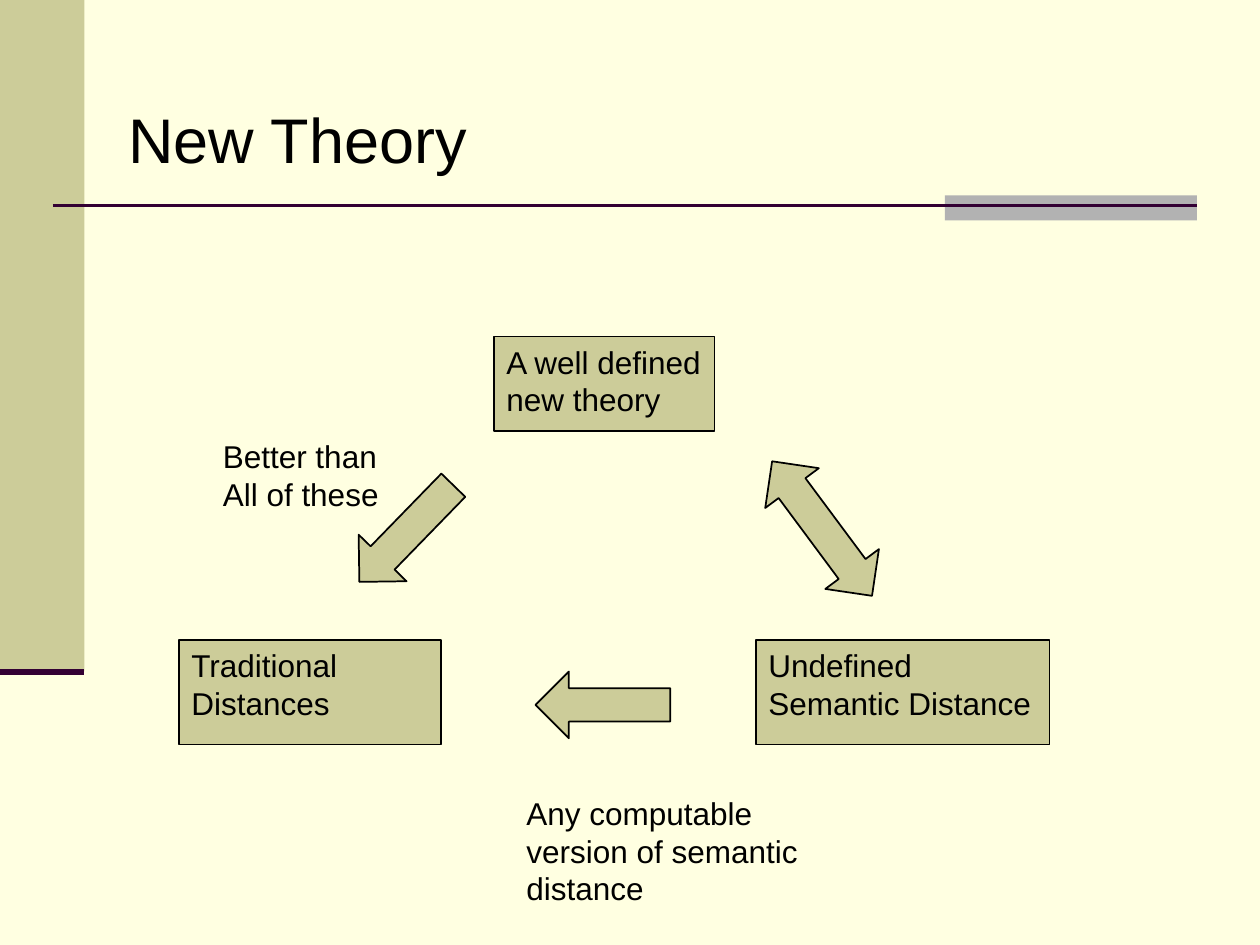
from pptx import Presentation
from pptx.dml.color import RGBColor
from pptx.enum.shapes import MSO_CONNECTOR, MSO_SHAPE as Shape
from pptx.enum.text import MSO_ANCHOR, PP_ALIGN
from pptx.oxml.ns import qn
from pptx.util import Inches, Pt
from lxml.etree import SubElement

COLORS = {
    "background": "FFFFE1",
    "khaki": "CCCC99",
    "gray": "B2B2B2",
    "plum": "330033",
    "black": "000000",
}


def color(name):
    return RGBColor.from_string(COLORS[name])


def write(frame, lines, size=18):
    frame.text = "\n".join(lines)
    frame.vertical_anchor = MSO_ANCHOR.TOP
    for paragraph in frame.paragraphs:
        paragraph.alignment = PP_ALIGN.LEFT
        for run in paragraph.runs:
            run.font.name = "Arial"
            run.font.size = Pt(size)
            run.font.color.rgb = color("black")


def add_figure(slide, kind, bounds, fill="khaki", outlined=True, rotation=0):
    figure = slide.shapes.add_shape(kind, *map(Inches, bounds))
    figure.shadow.inherit = False
    figure.rotation = rotation
    figure.fill.solid()
    figure.fill.fore_color.rgb = color(fill)
    if outlined:
        figure.line.color.rgb = color("black")
        figure.line.width = Pt(1)
    else:
        figure.line.fill.background()
    return figure


def add_concept(slide, bounds, text):
    frame = add_figure(slide, Shape.RECTANGLE, bounds).text_frame
    frame.word_wrap = True
    frame.margin_right = Inches(0.05)
    write(frame, [text])


def add_label(slide, bounds, lines, size=18):
    frame = slide.shapes.add_textbox(*map(Inches, bounds)).text_frame
    frame.word_wrap = False
    write(frame, lines, size)


def add_rule(slide, left, right, y, width):
    ends = map(Inches, (left, y, right, y))
    rule = slide.shapes.add_connector(MSO_CONNECTOR.STRAIGHT, *ends)
    rule.line.color.rgb = color("plum")
    rule.line.width = Pt(width)
    SubElement(rule._element.spPr, qn("a:effectLst"))


def add_decoration(slide):
    slide.background.fill.solid()
    slide.background.fill.fore_color.rgb = color("background")
    add_figure(slide, Shape.RECTANGLE, (0, 0, 0.67, 5.33), outlined=False)
    add_figure(slide, Shape.RECTANGLE, (7.5, 1.55, 2, 0.2), "gray", outlined=False)
    add_rule(slide, 0.42, 9.5, 1.63, 1.5)
    add_rule(slide, 0, 0.67, 5.33, 3.5)


def main():
    deck = Presentation()
    deck.slide_width, deck.slide_height = Inches(10), Inches(7.5)
    slide = deck.slides.add_slide(deck.slide_layouts[6])
    add_decoration(slide)

    add_concept(slide, (3.92, 2.67, 1.75, 0.75), "A well defined new theory")
    add_concept(slide, (1.42, 5.08, 2.08, 0.83), "Traditional Distances")
    add_concept(slide, (6, 5.08, 2.33, 0.83), "Undefined Semantic Distance")

    add_figure(slide, Shape.LEFT_ARROW, (4.25, 5.33, 1.07, 0.53))
    add_figure(slide, Shape.DOWN_ARROW, (2.96, 3.7, 0.53, 1.07), rotation=44.2)
    add_figure(slide, Shape.UP_DOWN_ARROW, (6.26, 3.53, 0.53, 1.33), rotation=323.4)

    add_label(slide, (1.67, 3.42, 1.46, 0.71), ["Better than", "All of these"])
    add_label(slide, (4.08, 6.25, 2.39, 1.01),
              ["Any computable", "version of semantic", "distance"])
    add_label(slide, (0.92, 0.75, 2.91, 0.71), ["New Theory"], size=36)

    deck.save("out.pptx")


if __name__ == "__main__":
    main()
